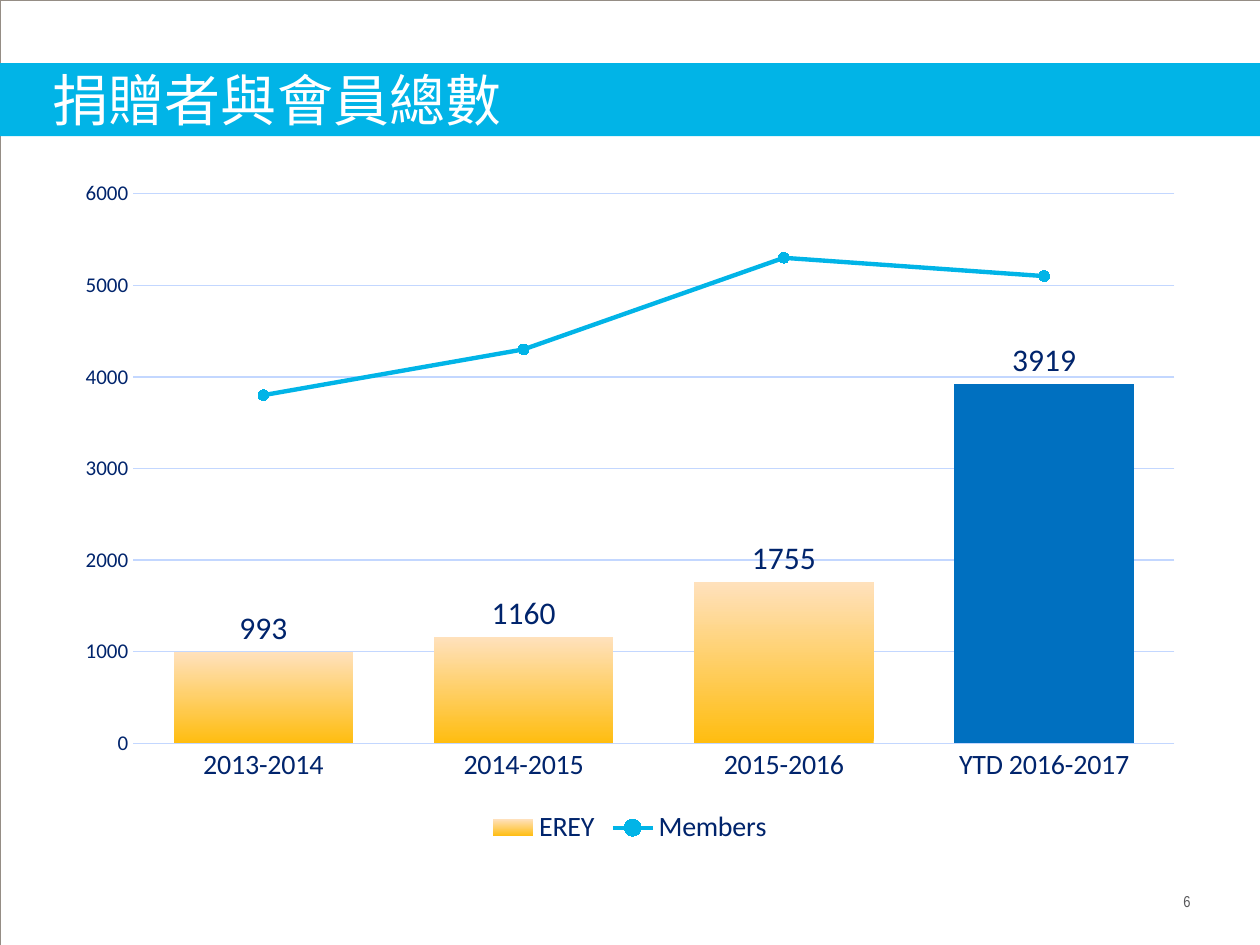
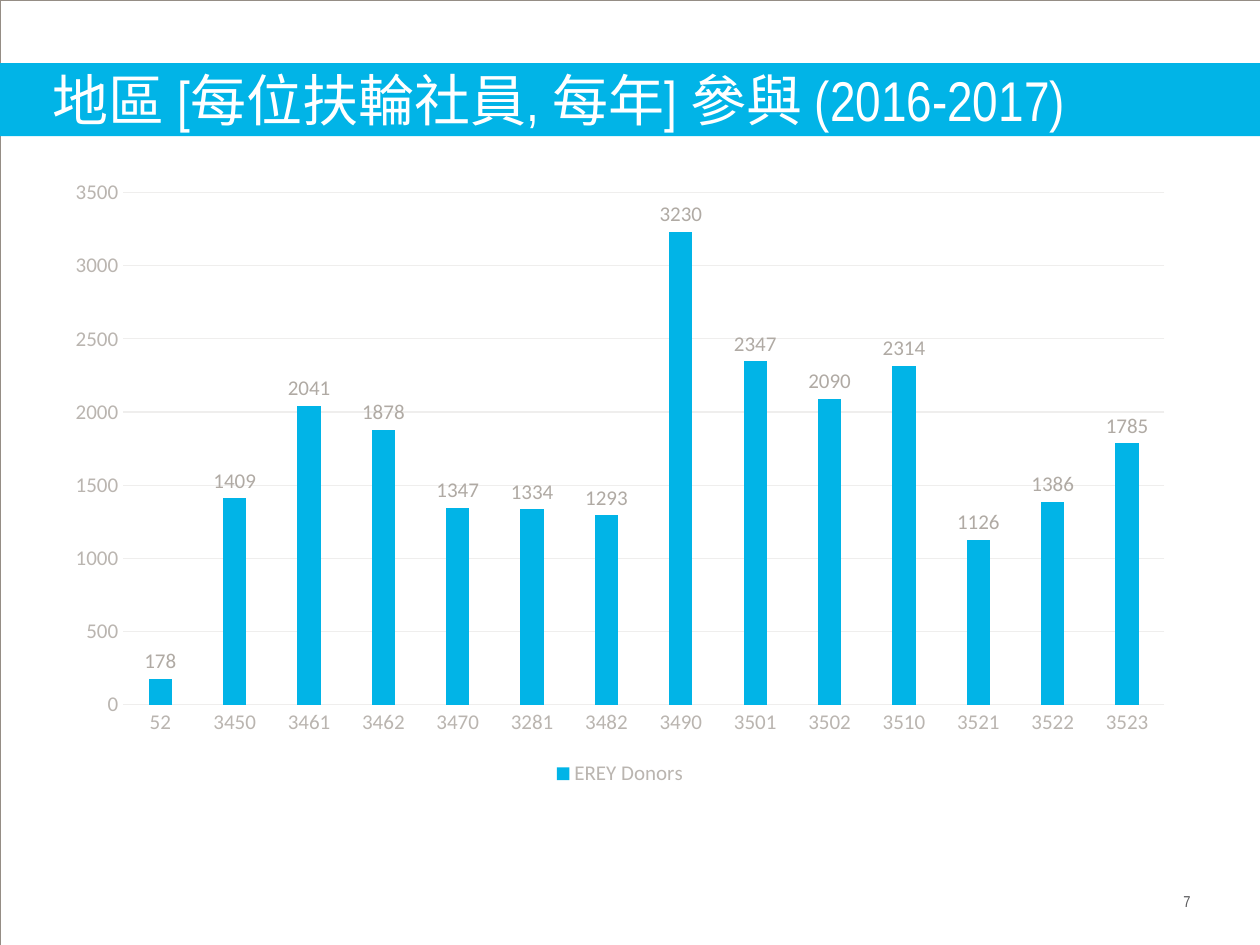
"""Builds two donor and membership chart slides with a shared band, title and page number."""
from dataclasses import dataclass

from lxml import etree
from pptx import Presentation
from pptx.chart.data import CategoryChartData
from pptx.dml.color import RGBColor as RGB
from pptx.enum.chart import (
    XL_CHART_TYPE as CT,
    XL_LABEL_POSITION as LabelPos,
    XL_LEGEND_POSITION as LegendPos,
    XL_MARKER_STYLE as Marker,
    XL_TICK_MARK as Tick,
)
from pptx.enum.shapes import MSO_SHAPE as Shape
from pptx.enum.text import MSO_ANCHOR as Anchor, MSO_AUTO_SIZE as AutoSize, PP_ALIGN as Align
from pptx.oxml.ns import qn
from pptx.util import Inches, Pt


@dataclass(frozen=True)
class Theme:
    heading_font: str = "Arial Narrow"
    chart_font: str = "Calibri"
    title_size: int = 32
    page_size: int = 9
    base_size: int = 10
    small: int = 12
    medium: int = 16
    large: int = 18
    white: str = "FFFFFF"
    sky: str = "01B4E7"
    blue: str = "0070C0"
    navy: str = "00246C"
    pale_blue: str = "C3D7FF"
    gold: str = "FFBD10"
    peach: str = "FFE1BC"
    taupe: str = "958D85"
    label_gray: str = "B0AAA4"
    axis_gray: str = "BAB5B0"
    grid_gray: str = "EFEEED"
    page_gray: str = "58585A"


def set_font(font, size, color, name):
    font.size, font.name, font.bold = Pt(size), name, False
    font.color.rgb = RGB.from_string(color)


def set_line(line, color, width):
    line.color.rgb = RGB.from_string(color)
    line.width = Pt(width)


def set_fill(fill, color):
    fill.solid()
    fill.fore_color.rgb = RGB.from_string(color)


def write(tf, text, *, size, color, font, align=Align.LEFT, anchor=Anchor.TOP):
    tf.margin_left = tf.margin_top = tf.margin_right = tf.margin_bottom = 0
    tf.word_wrap = True
    tf.auto_size = AutoSize.NONE
    tf.vertical_anchor = anchor
    p = tf.paragraphs[0]
    p.alignment = align
    r = p.add_run()
    r.text = text
    set_font(r.font, size, color, font)


class Deck:
    def __init__(self, theme):
        self.theme = theme
        self.prs = Presentation()
        self.prs.slide_width, self.prs.slide_height = Inches(10), Inches(7.5)
        self.s = None

    def slide(self, title, page):
        t = self.theme
        self.s = self.prs.slides.add_slide(self.prs.slide_layouts[5])
        self.rect(0, 0, 10, 7.5, line=t.taupe)
        self.rect(-0.08, 0.5, 10.17, 0.58, fill=t.sky)
        self.title(title)
        box = self.s.shapes.add_textbox(Inches(7.75), Inches(7.08), Inches(1.7), Inches(0.15))
        write(box.text_frame, str(page), size=t.page_size, color=t.page_gray,
              font=t.heading_font, align=Align.RIGHT)

    def title(self, text):
        t, sp = self.theme, self.s.shapes.title
        sp.left, sp.top, sp.width, sp.height = map(Inches, (0.42, 0.5, 9.58, 0.58))
        write(sp.text_frame, text, size=t.title_size, color=t.white,
              font=t.heading_font, anchor=Anchor.MIDDLE)

    def rect(self, left, top, width, height, fill=None, line=None):
        sp = self.s.shapes.add_shape(Shape.RECTANGLE, *map(Inches, (left, top, width, height)))
        sp.shadow.inherit = False
        if fill:
            set_fill(sp.fill, fill)
        else:
            sp.fill.background()
        if line:
            set_line(sp.line, line, 0.13)
        else:
            sp.line.fill.background()
        self.s.shapes.title.element.addprevious(sp.element)

    def column_chart(self, box, cats, series, *, top, step, gap, overlap=0,
                     text_color, grid_color, cat_size, label_size, label_color):
        t = self.theme
        data = CategoryChartData()
        data.categories = cats
        for name, values in series.items():
            data.add_series(name, values)
        frame = self.s.shapes.add_chart(CT.COLUMN_CLUSTERED, *map(Inches, box), data)
        chart = frame.chart
        chart.has_title = False
        set_font(chart.font, t.base_size, t.taupe, t.chart_font)

        chart.has_legend = True
        chart.legend.position = LegendPos.BOTTOM
        chart.legend.include_in_layout = False
        set_font(chart.legend.font, cat_size, text_color, t.chart_font)

        cat, val = chart.category_axis, chart.value_axis
        for axis, size in ((cat, cat_size), (val, t.small)):
            axis.major_tick_mark = axis.minor_tick_mark = Tick.NONE
            set_font(axis.tick_labels.font, size, text_color, t.chart_font)
        set_line(cat.format.line, grid_color, 0.75)
        val.format.line.fill.background()
        set_line(val.major_gridlines.format.line, grid_color, 0.75)
        val.minimum_scale, val.maximum_scale, val.major_unit = 0, top, step

        plot = chart.plots[0]
        plot.vary_by_categories = False
        plot.gap_width, plot.overlap = gap, overlap
        columns = plot.series[0]
        set_fill(columns.format.fill, t.sky)
        labels = columns.data_labels
        labels.show_value = True
        labels.position = LabelPos.OUTSIDE_END
        set_font(labels.font, label_size, label_color, t.chart_font)
        return chart

    def gradient_columns(self, columns, bottom, top):
        fill = columns.format.fill
        fill.gradient()
        fill.gradient_angle = 90
        for stop, color in zip(fill.gradient_stops, (bottom, top)):
            stop.color.rgb = RGB.from_string(color)

    def last_series_as_line(self, chart, color):
        ser = chart.plots[0].series[-1].format and chart.plots[0].series[-1]
        element = ser._element
        bars = element.getparent()
        invert = element.find(qn("c:invertIfNegative"))
        if invert is not None:
            element.remove(invert)
        lines = bars.makeelement(qn("c:lineChart"))
        etree.SubElement(lines, qn("c:grouping")).set("val", "standard")
        etree.SubElement(lines, qn("c:varyColors")).set("val", "0")
        lines.append(element)
        etree.SubElement(lines, qn("c:marker")).set("val", "1")
        for axis_id in bars.findall(qn("c:axId")):
            etree.SubElement(lines, qn("c:axId")).set("val", axis_id.get("val"))
        bars.addnext(lines)

        line = chart.plots[1].series[0]
        line.smooth = False
        set_line(line.format.line, color, 2.5)
        line.marker.style, line.marker.size = Marker.CIRCLE, 6
        set_fill(line.marker.format.fill, color)
        set_line(line.marker.format.line, color, 0.75)


def donors_and_members(deck):
    t = deck.theme
    deck.slide("捐贈者與會員總數", 6)
    chart = deck.column_chart(
        (0.5, 1.33, 9, 5.42),
        ["2013-2014", "2014-2015", "2015-2016", "YTD 2016-2017"],
        {"EREY": [993, 1160, 1755, 3919], "Members": [3800, 4300, 5300, 5100]},
        top=6000, step=1000, gap=45, text_color=t.navy, grid_color=t.pale_blue,
        cat_size=t.medium, label_size=t.large, label_color=t.navy)
    donors = chart.plots[0].series[0]
    deck.gradient_columns(donors, t.gold, t.peach)
    set_fill(donors.points[3].format.fill, t.blue)
    deck.last_series_as_line(chart, t.sky)


def district_participation(deck):
    t = deck.theme
    deck.slide("地區 [每位扶輪社員, 每年] 參與 (2016-2017)", 7)
    donors = {
        "52": 178, "3450": 1409, "3461": 2041, "3462": 1878, "3470": 1347,
        "3281": 1334, "3482": 1293, "3490": 3230, "3501": 2347, "3502": 2090,
        "3510": 2314, "3521": 1126, "3522": 1386, "3523": 1785,
    }
    deck.column_chart(
        (0.42, 1.33, 9, 4.95), list(donors), {"EREY Donors": list(donors.values())},
        top=3500, step=500, gap=219, overlap=-27, text_color=t.axis_gray,
        grid_color=t.grid_gray, cat_size=t.small, label_size=t.small,
        label_color=t.label_gray)


def main():
    deck = Deck(Theme())
    donors_and_members(deck)
    district_participation(deck)
    deck.prs.save("out.pptx")


if __name__ == "__main__":
    main()
